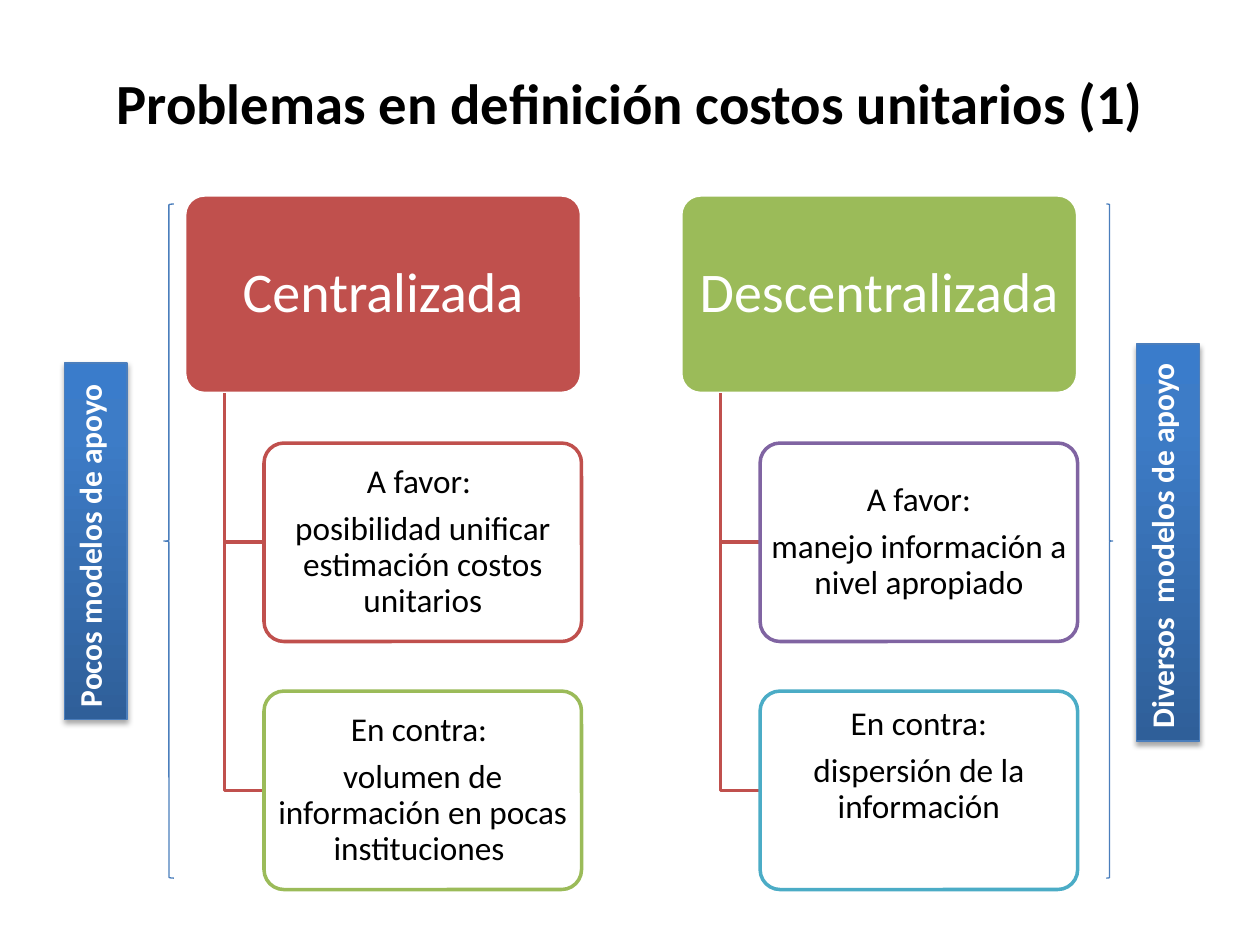
from copy import deepcopy
from dataclasses import dataclass

from lxml.etree import SubElement
from pptx import Presentation
from pptx.dml.color import RGBColor
from pptx.enum.shapes import MSO_SHAPE
from pptx.enum.text import MSO_ANCHOR, PP_ALIGN
from pptx.oxml.ns import qn
from pptx.util import Pt

RED, GREEN, PURPLE, TEAL = "C0504D", "9BBB59", "8064A2", "4BACC6"
BLUE, WHITE, BLACK = "4B7EBC", "FFFFFF", "000000"
GRADIENT = ((0, "2F5F99"), (0.8, "3D7CC7"), (1, "3A7CCB"))
HEAD_W, BOX_H = 226.8, 113.4
BOX_W, INDENT, TRUNK = 0.8 * HEAD_W, 0.2 * HEAD_W, 0.1 * HEAD_W
LEFT, TOP = 105.5, 111.4
COLUMN_STEP, ROW_STEP = 1.25 * HEAD_W, 1.25 * BOX_H


@dataclass
class Argument:
    lines: list[str]
    color: str
    space_below: float = 0


@dataclass
class Column:
    title: str
    color: str
    arguments: list[Argument]


@dataclass
class SideLabel:
    text: str
    x: float
    y: float
    h: float


@dataclass
class Brace:
    kind: MSO_SHAPE
    x: float
    w: float


COLUMNS = [
    Column("Centralizada", RED, [
        Argument(["A favor: ", "posibilidad unificar estimación costos unitarios"], RED),
        Argument(["En contra: ", "volumen de información en pocas instituciones "], GREEN),
    ]),
    Column("Descentralizada", GREEN, [
        Argument(["A favor:", "manejo información a nivel apropiado"], PURPLE),
        Argument(["En contra:", "dispersión de la información"], TEAL, 27.3),
    ]),
]
BRACES = [
    Brace(MSO_SHAPE.LEFT_BRACE, 93.6, 5.8),
    Brace(MSO_SHAPE.RIGHT_BRACE, 632.2, 3.6),
]
LABELS = [
    SideLabel("Pocos modelos de apoyo", 36.7, 207.4, 203.8),
    SideLabel("Diversos  modelos de apoyo", 649.4, 196.6, 226.8),
]


def rgb(color: str) -> RGBColor:
    return RGBColor.from_string(color)


def write(sp, lines: list[str], *, size: float, color: str, bold=False,
          align=PP_ALIGN.CENTER, anchor=MSO_ANCHOR.MIDDLE,
          insets=(7.2, 3.6, 7.2, 3.6), spacing=1.0, after=0.0) -> None:
    tf = sp.text_frame
    tf.word_wrap = True
    tf.vertical_anchor = anchor
    tf.margin_left, tf.margin_top, tf.margin_right, tf.margin_bottom = map(Pt, insets)
    for i, line in enumerate(lines):
        p = tf.paragraphs[0] if i == 0 else tf.add_paragraph()
        p.alignment = align
        p.line_spacing = spacing
        p.space_after = Pt(after)
        r = p.add_run()
        r.text = line
        r.font.name = "Calibri"
        r.font.size = Pt(size)
        r.font.bold = bold
        r.font.color.rgb = rgb(color)


def outline(sp, color: str, width: float) -> None:
    sp.shadow.inherit = False
    sp.line.color.rgb = rgb(color)
    sp.line.width = Pt(width)


def add_shape(s, kind: MSO_SHAPE, x: float, y: float, w: float, h: float,
              *, line: str, width: float, fill: str | None = None):
    sp = s.shapes.add_shape(kind, Pt(x), Pt(y), Pt(w), Pt(h))
    outline(sp, line, width)
    if fill:
        sp.fill.solid()
        sp.fill.fore_color.rgb = rgb(fill)
    else:
        sp.fill.background()
    return sp


def add_box(s, x: float, y: float, w: float, *, fill: str, line: str):
    sp = add_shape(s, MSO_SHAPE.ROUNDED_RECTANGLE, x, y, w, BOX_H,
                   line=line, width=2, fill=fill)
    sp.adjustments[0] = 0.1
    return sp


def add_elbow(s, x: float, y: float, end_x: float, end_y: float) -> None:
    fb = s.shapes.build_freeform(Pt(x), Pt(y))
    fb.add_line_segments([(Pt(x), Pt(end_y)), (Pt(end_x), Pt(end_y))], close=False)
    sp = fb.convert_to_shape()
    sp.fill.background()
    outline(sp, RED, 2)


def add_column(s, column: Column, x: float) -> None:
    head = add_box(s, x, TOP, HEAD_W, fill=column.color, line=WHITE)
    write(head, [column.title], size=32, color=WHITE, spacing=0.9,
          insets=(4.8, 3.2, 4.8, 3.2))
    for row, arg in enumerate(column.arguments, 1):
        y = TOP + row * ROW_STEP
        add_elbow(s, x + TRUNK, TOP + BOX_H, x + INDENT, y + BOX_H / 2)
        box = add_box(s, x + INDENT, y, BOX_W, fill=WHITE, line=arg.color)
        write(box, arg.lines, size=19, color=BLACK, spacing=0.9, after=6.5,
              insets=(2.85, 1.9, 2.85, 1.9 + arg.space_below))


def add_gradient(sp) -> None:
    sp.fill.gradient()
    sp.fill.gradient_angle = 90
    stops = sp.fill.gradient_stops
    gs_lst = sp._element.spPr.find(qn("a:gradFill")).find(qn("a:gsLst"))
    for _ in range(len(GRADIENT) - len(stops)):
        gs_lst.append(deepcopy(gs_lst[0]))
    for stop, (position, color) in zip(sp.fill.gradient_stops, GRADIENT):
        stop.position = position
        stop.color.rgb = rgb(color)


def add_shadow(sp) -> None:
    effects = sp._element.spPr.find(qn("a:effectLst"))
    shadow = SubElement(effects, qn("a:outerShdw"), blurRad=str(Pt(3.1)),
                        dist=str(Pt(1.8)), dir="5400000", rotWithShape="0")
    color = SubElement(shadow, qn("a:srgbClr"), val=BLACK)
    SubElement(color, qn("a:alpha"), val="35000")


def add_label(s, label: SideLabel) -> None:
    sp = add_shape(s, MSO_SHAPE.RECTANGLE, label.x, label.y, 36, label.h,
                   line=BLUE, width=0.75)
    add_gradient(sp)
    add_shadow(sp)
    write(sp, [label.text], size=18, color=WHITE, bold=True,
          align=PP_ALIGN.LEFT, anchor=MSO_ANCHOR.TOP)
    sp.text_frame._txBody.bodyPr.set("vert", "vert270")


def main() -> None:
    prs = Presentation()
    prs.slide_width, prs.slide_height = Pt(720), Pt(540)
    s = prs.slides.add_slide(prs.slide_layouts[6])
    title = s.shapes.add_textbox(Pt(36), Pt(21.6), Pt(648), Pt(72.7))
    write(title, ["Problemas en definición costos unitarios (1)"],
          size=32.4, color=BLACK, bold=True)
    for i, column in enumerate(COLUMNS):
        add_column(s, column, LEFT + i * COLUMN_STEP)
    for brace, label in zip(BRACES, LABELS):
        add_shape(s, brace.kind, brace.x, 116.6, brace.w, 385.2, line=BLUE, width=0.75)
        add_label(s, label)
    prs.save("out.pptx")


if __name__ == "__main__":
    main()
